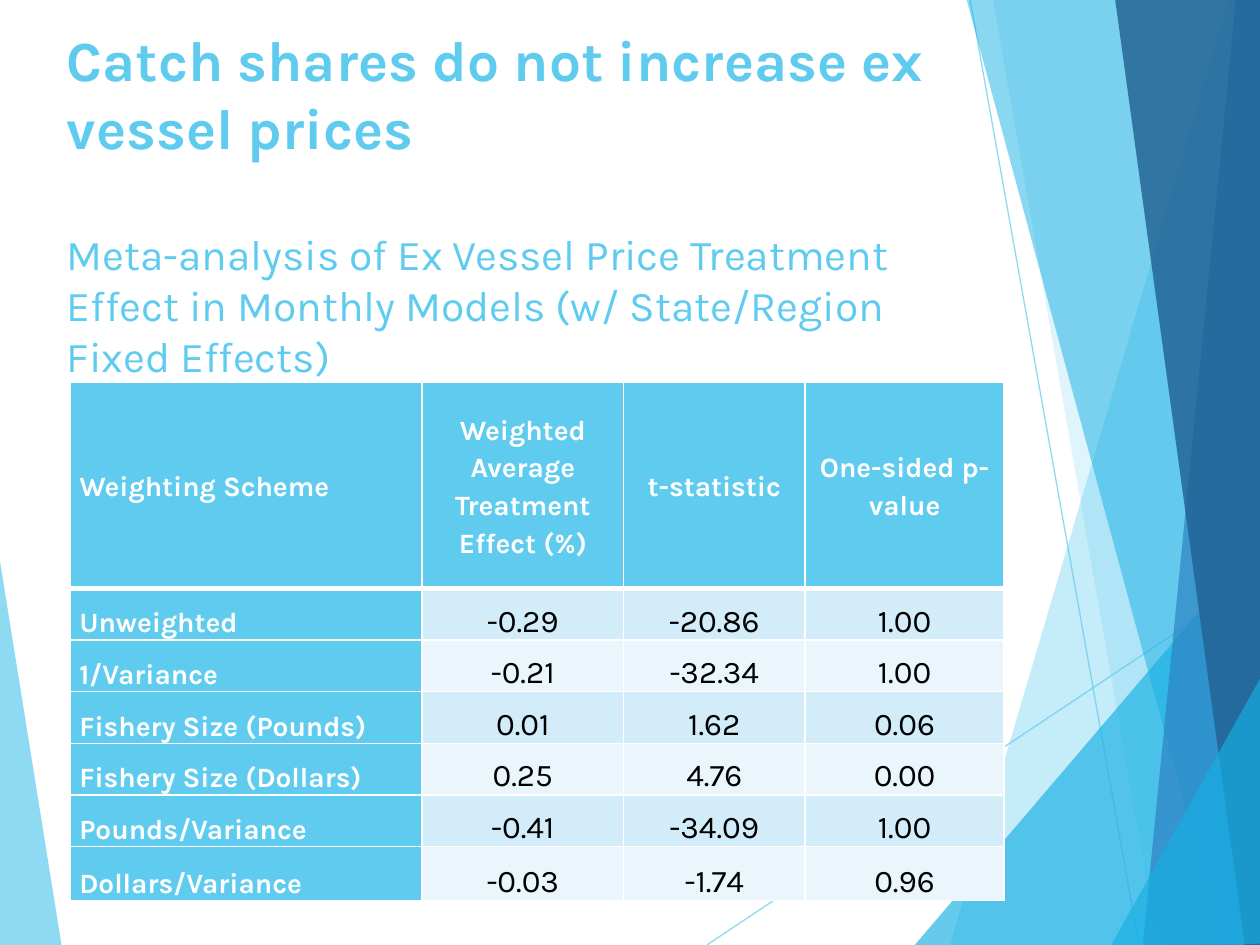
"""Build a slide with a meta-analysis table beside faceted blue panels."""
from dataclasses import dataclass

from lxml import etree
from pptx import Presentation
from pptx import util as u
from pptx.dml.color import RGBColor
from pptx.enum import text
from pptx.oxml import ns


@dataclass(frozen=True)
class Theme:
    """Colours, font and type sizes of the slide."""
    font: str = "Karla"
    sky: str = "5FCBEF"
    cyan: str = "17B0E4"
    blue: str = "2E83C3"
    navy: str = "226292"
    white: str = "FFFFFF"
    black: str = "000000"
    bands: tuple[str, str] = ("D2ECF9", "EAF6FC")
    title: float = 32.4
    subtitle: float = 24.3
    label: float = 16
    value: float = 18


@dataclass(frozen=True)
class Panel:
    """A translucent polygon with its corners in inches."""
    colour: str
    opacity: int
    corners: tuple[tuple[float, float], ...]


@dataclass(frozen=True)
class Ray:
    """A thin translucent line with its ends in inches."""
    start: tuple[float, float]
    end: tuple[float, float]


THEME = Theme()
LEFT_PANEL = Panel(THEME.sky, 70, ((-0.01, 4.39), (0.49, 7.51), (-0.01, 7.5)))
RAYS = (Ray((5.61, 7.5), (10.01, 4.57)), Ray((7.7, 0), (9.04, 7.5)))
RIGHT_PANELS = (
    Panel(THEME.sky, 36, ((9.75, 0), (7.54, 7.5), (10.02, 7.51), (10.01, 0.01))),
    Panel(THEME.sky, 20, ((7.88, -0.01), (9.19, 7.5), (10.01, 7.5), (10.01, -0.01))),
    Panel(THEME.cyan, 66, ((7.26, 7.5), (10, 4.29), (10.01, 7.5))),
    Panel(THEME.cyan, 50, ((7.67, -0.01), (9.7, 7.5), (10.01, 7.49), (10.01, -0.01))),
    Panel(THEME.blue, 70, ((9.81, -0.01), (9.07, 7.5), (10.01, 7.5), (10, -0.01))),
    Panel(THEME.navy, 82, ((8.85, -0.01), (9.88, 7.5), (10.02, 7.5), (10, -0.01))),
    Panel(THEME.cyan, 66, ((8.82, 7.5), (10.02, 5.35), (10.02, 7.49))),
)
HEADINGS = (
    ("Catch shares do not increase ex vessel prices", THEME.title, True, 0),
    ("Meta-analysis of Ex Vessel Price Treatment Effect in Monthly Models "
     "(w/ State/Region Fixed Effects)", THEME.subtitle, False, 38),
)
ROWS = (
    ("Weighting Scheme", "Weighted Average Treatment Effect (%)", "t-statistic",
     "One-sided p-value"),
    ("Unweighted", "-0.29", "-20.86", "1.00"),
    ("1/Variance", "-0.21", "-32.34", "1.00"),
    ("Fishery Size (Pounds)", "0.01", "1.62", "0.06"),
    ("Fishery Size (Dollars)", "0.25", "4.76", "0.00"),
    ("Pounds/Variance", "-0.41", "-34.09", "1.00"),
    ("Dollars/Variance", "-0.03", "-1.74", "0.96"),
)
COLUMN_WIDTHS = (2.79, 1.6, 1.44, 1.58)
ROW_HEIGHTS = (1.64, 0.41, 0.41, 0.41, 0.41, 0.41, 0.43)


def apply(target, values: dict) -> None:
    """Set every named format value on the target."""
    for name, value in values.items():
        setattr(target, name, value)


def write(para, words: str, size: float, colour: str, bold: bool) -> None:
    """Add one formatted span to a paragraph."""
    span = para.add_run()
    span.text = words
    apply(span.font, {"name": THEME.font, "size": u.Pt(size), "bold": bold})
    span.font.color.rgb = RGBColor.from_string(colour)


def fade(shape, opacity: int) -> None:
    """Give the colours of a shape an opacity in percent."""
    for colour in shape.element.iter(ns.qn("a:srgbClr")):
        etree.SubElement(colour, ns.qn("a:alpha"), val=str(opacity * 1000))


def draw_panel(page, panel: Panel) -> None:
    """Draw a translucent polygon."""
    points = [(u.Inches(x), u.Inches(y)) for x, y in panel.corners]
    builder = page.shapes.build_freeform(*points[0])
    builder.add_line_segments(points[1:], close=True)
    shape = builder.convert_to_shape()
    shape.shadow.inherit = False
    shape.fill.solid()
    shape.fill.fore_color.rgb = RGBColor.from_string(panel.colour)
    shape.line.fill.background()
    fade(shape, panel.opacity)


def draw_ray(page, ray: Ray) -> None:
    """Draw a thin translucent line."""
    ends = [u.Inches(value) for value in ray.start + ray.end]
    line = page.shapes.add_connector(1, *ends)
    line.line.color.rgb = RGBColor.from_string(THEME.sky)
    line.line.width = u.Pt(0.75)
    etree.SubElement(line.element.spPr, ns.qn("a:effectLst"))
    fade(line, 70)


def draw_heading(page) -> None:
    """Fill the title placeholder and bring it in front of the panels."""
    box = page.shapes.title
    box.element.getparent().append(box.element)
    apply(box, {"left": u.Inches(0.43), "top": u.Inches(0.15),
                "width": u.Inches(7.18), "height": u.Inches(1.44)})
    frame = box.text_frame
    apply(frame, {"word_wrap": True, "auto_size": text.MSO_AUTO_SIZE.NONE,
                  "vertical_anchor": text.MSO_ANCHOR.TOP})
    for index, (words, size, bold, gap) in enumerate(HEADINGS):
        para = frame.add_paragraph() if index else frame.paragraphs[0]
        apply(para, {"alignment": text.PP_ALIGN.LEFT, "space_before": u.Pt(gap)})
        write(para, words, size, THEME.sky, bold)


def draw_borders(cell, row: int) -> None:
    """Rule a cell in white, with a thick line under the header."""
    widths = {"L": 1, "R": 1, "T": 3 if row == 1 else 1, "B": 3 if row == 0 else 1}
    properties = cell._tc.get_or_add_tcPr()
    for side, width in widths.items():
        edge = etree.SubElement(properties, ns.qn(f"a:ln{side}"), w=str(u.Pt(width)))
        fill = etree.SubElement(edge, ns.qn("a:solidFill"))
        etree.SubElement(fill, ns.qn("a:srgbClr"), val=THEME.white)


def draw_cell(cell, words: str, row: int, column: int) -> None:
    """Format and fill one table cell."""
    header, label = row == 0, row == 0 or column == 0
    anchor = text.MSO_ANCHOR.MIDDLE if header else text.MSO_ANCHOR.BOTTOM
    apply(cell, {"margin_left": u.Inches(0.07), "margin_right": u.Inches(0.07),
                 "margin_top": 0, "margin_bottom": 0, "vertical_anchor": anchor})
    draw_borders(cell, row)
    cell.fill.solid()
    colour = THEME.sky if label else THEME.bands[(row - 1) % 2]
    cell.fill.fore_color.rgb = RGBColor.from_string(colour)
    para = cell.text_frame.paragraphs[0]
    alignment = text.PP_ALIGN.CENTER if column else text.PP_ALIGN.LEFT
    apply(para, {"alignment": alignment, "line_spacing": 1.15})
    size, ink = (THEME.label, THEME.white) if label else (THEME.value, THEME.black)
    write(para, words, size, ink, label)


def draw_table(page) -> None:
    """Draw the table of treatment effects."""
    frame = page.shapes.add_table(
        len(ROWS), len(COLUMN_WIDTHS), u.Inches(0.56), u.Inches(3.03),
        u.Inches(sum(COLUMN_WIDTHS)), u.Inches(sum(ROW_HEIGHTS)))
    table = frame.table
    for column, width in zip(table.columns, COLUMN_WIDTHS):
        column.width = u.Inches(width)
    for row, height in zip(table.rows, ROW_HEIGHTS):
        row.height = u.Inches(height)
    for row, values in enumerate(ROWS):
        for column, words in enumerate(values):
            draw_cell(table.cell(row, column), words, row, column)


def main() -> None:
    """Build and save the deck."""
    deck = Presentation()
    apply(deck, {"slide_width": u.Inches(10), "slide_height": u.Inches(7.5)})
    page = deck.slides.add_slide(deck.slide_layouts.get_by_name("Title Only"))
    draw_panel(page, LEFT_PANEL)
    for ray in RAYS:
        draw_ray(page, ray)
    for panel in RIGHT_PANELS:
        draw_panel(page, panel)
    draw_heading(page)
    draw_table(page)
    deck.save("out.pptx")


if __name__ == "__main__":
    main()
